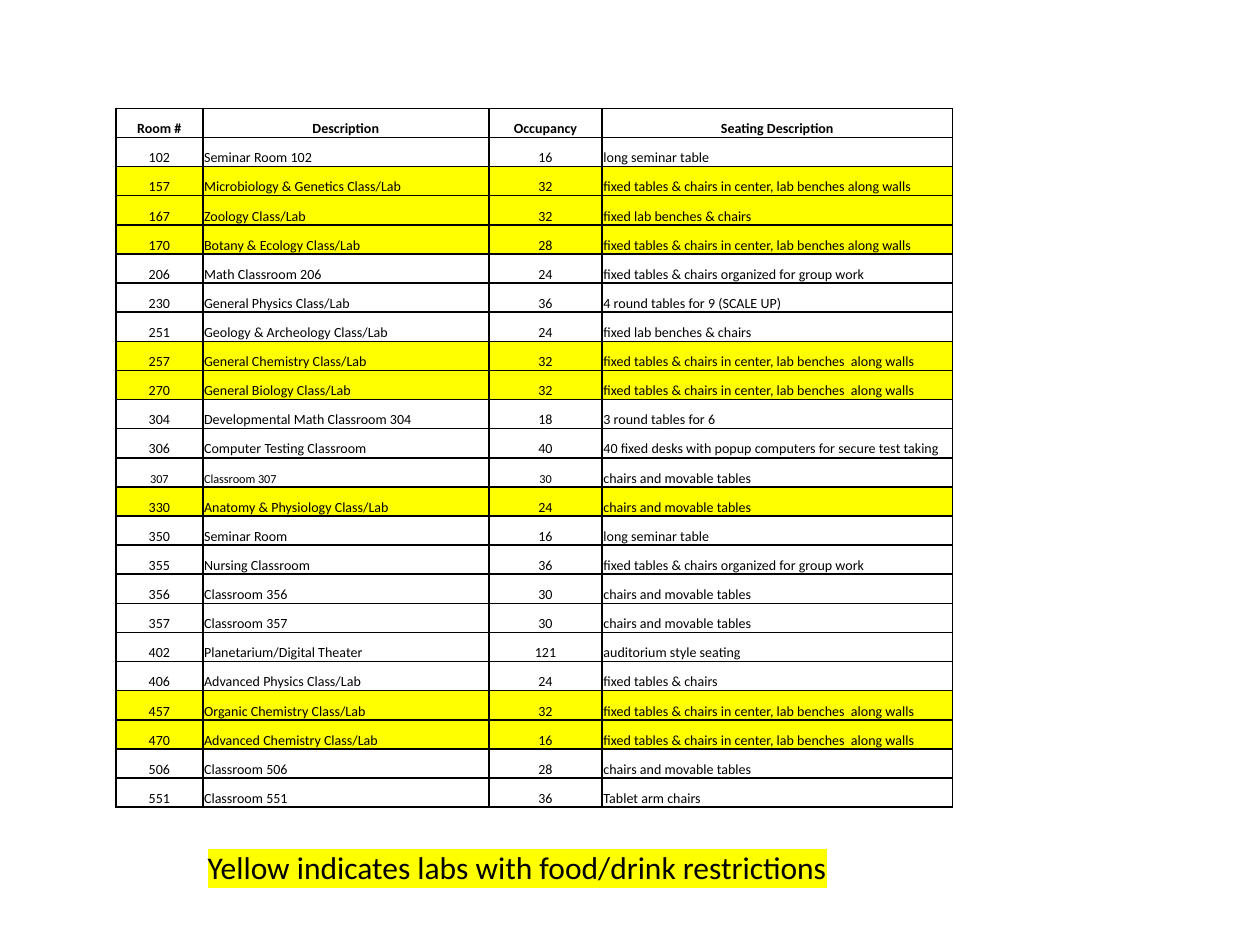
import pptx
import pptx.util
import pptx.dml.color
import pptx.enum.text
import pptx.oxml
import pptx.oxml.ns

Inches, Pt = pptx.util.Inches, pptx.util.Pt
RGB = pptx.dml.color.RGBColor.from_string
PP_ALIGN = pptx.enum.text.PP_ALIGN

THEME = {
    "font": "Calibri", "ink": "000000", "restricted": "FFFF00",
    "cell": 8, "small": 7, "note": 18, "border": 1,
}

HEADINGS = ("Room #", "Description", "Occupancy", "Seating Description")
ROOMS = [
    ("102", "Seminar Room 102", "16", "long seminar table"),
    ("157", "Microbiology & Genetics Class/Lab", "32",
     "fixed tables & chairs in center, lab benches along walls"),
    ("167", "Zoology Class/Lab", "32", "fixed lab benches & chairs"),
    ("170", "Botany & Ecology Class/Lab", "28",
     "fixed tables & chairs in center, lab benches along walls"),
    ("206", "Math Classroom 206", "24", "fixed tables & chairs organized for group work"),
    ("230", "General Physics Class/Lab", "36", "4 round tables for 9 (SCALE UP)"),
    ("251", "Geology & Archeology Class/Lab", "24", "fixed lab benches & chairs"),
    ("257", "General Chemistry Class/Lab", "32",
     "fixed tables & chairs in center, lab benches  along walls"),
    ("270", "General Biology Class/Lab", "32",
     "fixed tables & chairs in center, lab benches  along walls"),
    ("304", "Developmental Math Classroom 304", "18", "3 round tables for 6"),
    ("306", "Computer Testing Classroom", "40",
     "40 fixed desks with popup computers for secure test taking"),
    ("307", "Classroom 307", "30", "chairs and movable tables"),
    ("330", "Anatomy & Physiology Class/Lab", "24", "chairs and movable tables"),
    ("350", "Seminar Room", "16", "long seminar table"),
    ("355", "Nursing Classroom", "36", "fixed tables & chairs organized for group work"),
    ("356", "Classroom 356", "30", "chairs and movable tables"),
    ("357", "Classroom 357", "30", "chairs and movable tables"),
    ("402", "Planetarium/Digital Theater", "121", "auditorium style seating"),
    ("406", "Advanced Physics Class/Lab", "24", "fixed tables & chairs"),
    ("457", "Organic Chemistry Class/Lab", "32",
     "fixed tables & chairs in center, lab benches  along walls"),
    ("470", "Advanced Chemistry Class/Lab", "16",
     "fixed tables & chairs in center, lab benches  along walls"),
    ("506", "Classroom 506", "28", "chairs and movable tables"),
    ("551", "Classroom 551", "36", "Tablet arm chairs"),
]
RESTRICTED_ROOMS = {"157", "167", "170", "257", "270", "330", "457", "470"}
SMALL_PRINT_ROOM = "307"
NOTE = "Yellow indicates labs with food/drink restrictions"

COLUMN_WIDTHS = (0.69, 2.27, 0.9, 2.78)
CENTERED_COLUMNS = (0, 2)
SEATING_COLUMN = 3
TABLE_LEFT, TABLE_TOP, TABLE_HEIGHT = 0.92, 0.86, 5.55
CELL_FORMAT = {
    "margin_left": Inches(0.01), "margin_right": Inches(0.01),
    "margin_top": Inches(0.01), "margin_bottom": 0,
    "vertical_anchor": pptx.enum.text.MSO_ANCHOR.BOTTOM,
}


def add_text(paragraph, text, size, bold=False):
    run = paragraph.add_run()
    run.text = text
    run.font.color.rgb = RGB(THEME["ink"])
    for key, value in {"name": THEME["font"], "size": Pt(size), "bold": bold}.items():
        setattr(run.font, key, value)
    return run


def add_borders(cell):
    properties = cell._tc.get_or_add_tcPr()
    for side in ("lnL", "lnR", "lnT", "lnB"):
        properties.append(pptx.oxml.parse_xml(
            f'<a:{side} {pptx.oxml.ns.nsdecls("a")} w="{Pt(THEME["border"])}">'
            f'<a:solidFill><a:srgbClr val="{THEME["ink"]}"/></a:solidFill></a:{side}>'))


def highlight(run):
    fill = run._r.rPr.find(pptx.oxml.ns.qn("a:solidFill"))
    fill.addnext(pptx.oxml.parse_xml(
        f'<a:highlight {pptx.oxml.ns.nsdecls("a")}>'
        f'<a:srgbClr val="{THEME["restricted"]}"/></a:highlight>'))


def add_room_table(slide):
    rows = [HEADINGS, *ROOMS]
    table = slide.shapes.add_table(
        len(rows), len(HEADINGS), Inches(TABLE_LEFT), Inches(TABLE_TOP),
        Inches(sum(COLUMN_WIDTHS)), Inches(TABLE_HEIGHT)).table
    table.first_row = table.horz_banding = False
    for column, width in zip(table.columns, COLUMN_WIDTHS):
        column.width = Inches(width)

    for r, values in enumerate(rows):
        table.rows[r].height = Inches(TABLE_HEIGHT / len(rows))
        room, heading = values[0], r == 0
        for c, text in enumerate(values):
            cell = table.cell(r, c)
            for key, value in CELL_FORMAT.items():
                setattr(cell, key, value)
            add_borders(cell)
            if room in RESTRICTED_ROOMS:
                cell.fill.solid()
                cell.fill.fore_color.rgb = RGB(THEME["restricted"])
            else:
                cell.fill.background()
            small = room == SMALL_PRINT_ROOM and c != SEATING_COLUMN
            paragraph = cell.text_frame.paragraphs[0]
            centered = heading or c in CENTERED_COLUMNS
            paragraph.alignment = PP_ALIGN.CENTER if centered else PP_ALIGN.LEFT
            add_text(paragraph, text, THEME["small" if small else "cell"], heading)


def add_note(slide):
    frame = slide.shapes.add_textbox(
        Inches(1.55), Inches(6.68), Inches(5.36), Inches(0.4)).text_frame
    frame.word_wrap = True
    frame.auto_size = pptx.enum.text.MSO_AUTO_SIZE.SHAPE_TO_FIT_TEXT
    highlight(add_text(frame.paragraphs[0], NOTE, THEME["note"]))


def main():
    deck = pptx.Presentation()
    deck.slide_width, deck.slide_height = Inches(10), Inches(7.5)
    slide = deck.slides.add_slide(deck.slide_layouts[6])
    add_room_table(slide)
    add_note(slide)
    deck.save("out.pptx")


if __name__ == "__main__":
    main()
